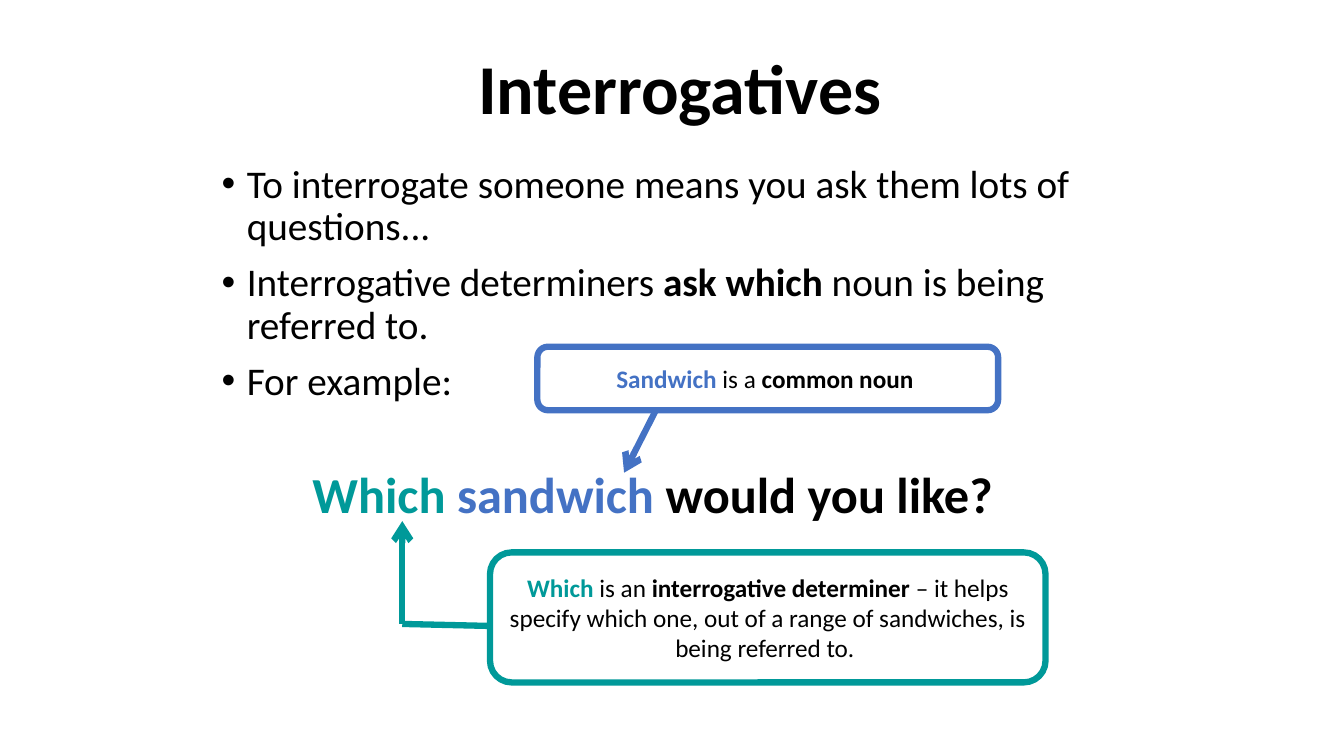
from dataclasses import dataclass

from lxml import etree
from pptx import Presentation
from pptx.dml.color import RGBColor
from pptx.enum.shapes import MSO_CONNECTOR, MSO_SHAPE
from pptx.enum.text import MSO_ANCHOR, MSO_AUTO_SIZE, PP_ALIGN
from pptx.oxml.ns import qn
from pptx.util import Inches, Pt

STRAIGHT = MSO_CONNECTOR.STRAIGHT
ROUNDED = MSO_SHAPE.ROUNDED_RECTANGLE
MIDDLE, TOP = MSO_ANCHOR.MIDDLE, MSO_ANCHOR.TOP
CENTER, LEFT = PP_ALIGN.CENTER, PP_ALIGN.LEFT
NO_AUTOFIT = MSO_AUTO_SIZE.NONE
TITLE_ONLY = 5


@dataclass(frozen=True)
class Theme:
    font: str = "Calibri"
    ink: RGBColor = RGBColor(0x00, 0x00, 0x00)
    paper: RGBColor = RGBColor(0xFF, 0xFF, 0xFF)
    determiner: RGBColor = RGBColor(0x00, 0x99, 0x99)
    noun: RGBColor = RGBColor(0x44, 0x72, 0xC4)
    title_size: Pt = Pt(50)
    body_size: Pt = Pt(28)
    example_size: Pt = Pt(36)
    callout_size: Pt = Pt(18)
    stroke: Pt = Pt(4.5)


THEME = Theme()

DEFINITIONS = [
    [("To interrogate someone means you ask them lots of questions...",)],
    [("Interrogative determiners ",), ("ask which", True), (" noun is being referred to.",)],
    [("For example:",)],
]
EXAMPLE = [
    ("Which ", True, THEME.determiner),
    ("sandwich", True, THEME.noun),
    (" would you like?", True),
]
NOUN_NOTE = [("Sandwich", True, THEME.noun), (" is a ",), ("common noun ", True)]
DETERMINER_NOTE = [
    ("Which", True, THEME.determiner),
    (" is an ",),
    ("interrogative determiner", True),
    (" – it helps specify which one, out of a range of sandwiches, is being referred to. ",),
]


def inches(values):
    return [Inches(value) for value in values]


def apply(target, formats):
    for name, value in formats.items():
        setattr(target, name, value)


def write_runs(paragraph, runs, size):
    """Add runs given as (text, bold, colour); the last two are optional."""
    for text, *style in runs:
        bold, color = (*style, False, THEME.ink)[:2] if len(style) != 1 else (style[0], THEME.ink)
        run = paragraph.add_run()
        run.text = text
        apply(run.font, {"name": THEME.font, "size": size, "bold": bold})
        run.font.color.rgb = color


def fill_frame(frame, paragraphs, size, align=LEFT, anchor=TOP, spacing=None):
    apply(frame, {"word_wrap": True, "auto_size": NO_AUTOFIT, "vertical_anchor": anchor})
    for index, runs in enumerate(paragraphs):
        paragraph = frame.paragraphs[0] if index == 0 else frame.add_paragraph()
        apply(paragraph, {"alignment": align, **(spacing or {})})
        write_runs(paragraph, runs, size)


def add_title(slide, text, box):
    title = slide.shapes.title
    apply(title, dict(zip(("left", "top", "width", "height"), inches(box))))
    fill_frame(title.text_frame, [[(text, True)]], THEME.title_size, CENTER, MIDDLE,
               {"line_spacing": 0.9})


def add_text(slide, box, paragraphs, size, spacing=None):
    frame = slide.shapes.add_textbox(*inches(box)).text_frame
    fill_frame(frame, paragraphs, size, spacing=spacing)
    return frame


def add_bullets(slide, box, paragraphs):
    frame = add_text(slide, box, paragraphs, THEME.body_size,
                     {"line_spacing": 0.9, "space_before": Pt(10)})
    for paragraph in frame.paragraphs:
        properties = paragraph._p.get_or_add_pPr()
        properties.set("marL", str(Inches(0.25)))
        properties.set("indent", str(Inches(-0.25)))
        etree.SubElement(properties, qn("a:buFont"), typeface="Arial")
        etree.SubElement(properties, qn("a:buChar"), char="•")


def add_callout(slide, box, runs, color):
    callout = slide.shapes.add_shape(ROUNDED, *inches(box))
    callout.shadow.inherit = False
    callout.fill.solid()
    callout.fill.fore_color.rgb = THEME.paper
    callout.line.color.rgb = color
    callout.line.width = THEME.stroke
    fill_frame(callout.text_frame, [runs], THEME.callout_size, CENTER, MIDDLE)


def add_pointer(slide, start, end, color, arrow=True):
    pointer = slide.shapes.add_connector(STRAIGHT, *inches((*start, *end)))
    pointer.line.color.rgb = color
    pointer.line.width = THEME.stroke
    if arrow:
        etree.SubElement(pointer.line._get_or_add_ln(), qn("a:tailEnd"), type="arrow")
    etree.SubElement(pointer._element.spPr, qn("a:effectLst"))


def main():
    deck = Presentation()
    deck.slide_width, deck.slide_height = inches((13.33, 7.5))
    slide = deck.slides.add_slide(deck.slide_layouts[TITLE_ONLY])

    add_title(slide, "Interrogatives", (2.34, 0.29, 8.81, 1.25))
    add_bullets(slide, (2.1, 1.58, 9.07, 5), DEFINITIONS)

    elbow = (3.99, 6.19)
    add_pointer(slide, elbow, (3.99, 5.17), THEME.determiner)
    add_callout(slide, (4.86, 5.48, 5.51, 1.29), DETERMINER_NOTE, THEME.determiner)
    add_pointer(slide, (4.86, 6.21), elbow, THEME.determiner, arrow=False)

    add_callout(slide, (5.33, 3.44, 4.57, 0.63), NOUN_NOTE, THEME.noun)
    add_pointer(slide, (6.51, 4.06), (6.19, 4.69), THEME.noun)
    add_text(slide, (3, 4.54, 7.32, 0.71), [EXAMPLE], THEME.example_size)

    deck.save("out.pptx")


if __name__ == "__main__":
    main()
